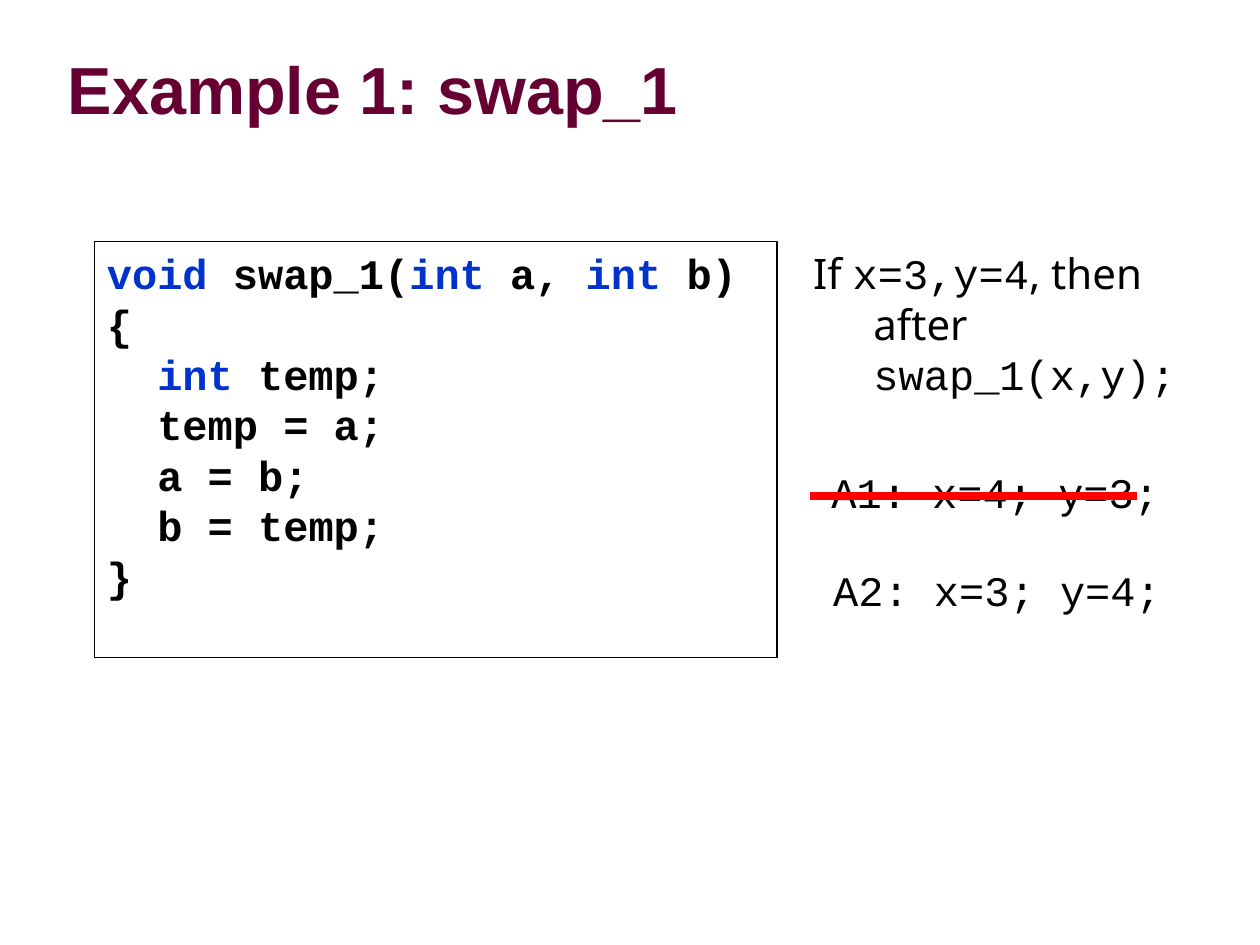
from lxml import etree
from pptx import Presentation
from pptx import util as u
from pptx.dml.color import RGBColor
from pptx.enum import shapes, text
from pptx.oxml.ns import qn

COLORS = {"title": "660033", "keyword": "0033CC", "ink": "000000", "strike": "FF0000"}
STYLES = {
    "title": ("Arial", 38, True, "title"),
    "code": ("Courier New", 24, True, "ink"),
    "keyword": ("Courier New", 24, True, "keyword"),
    "prose": ("Noto Sans", 24, False, "ink"),
    "mono": ("Courier New", 24, False, "ink"),
}


class Deck:
    """Draws styled elements on the current slide."""

    def __init__(self, prs):
        self.s = prs.slides.add_slide(prs.slide_layouts[6])

    def color(self, name):
        return RGBColor.from_string(COLORS[name])

    def format(self, r, style):
        name, size, bold, color = STYLES[style]
        r.font.name, r.font.size, r.font.bold = name, u.Pt(size), bold
        r.font.color.rgb = self.color(color)

    def fill_text(self, tf, lines):
        tf.text = "\n".join("" for _ in lines)
        for p, line in zip(tf.paragraphs, lines):
            p.alignment = text.PP_ALIGN.LEFT
            for part, style in line:
                if part == "\v":
                    p.add_line_break()
                    continue
                r = p.add_run()
                r.text = part
                self.format(r, style)

    def label(self, box, lines, wrap=True, anchor=text.MSO_ANCHOR.TOP, hanging=None):
        tf = self.s.shapes.add_textbox(*map(u.Pt, box)).text_frame
        tf.word_wrap, tf.vertical_anchor = wrap, anchor
        self.fill_text(tf, lines)
        if hanging:
            for p in tf.paragraphs:
                pPr = p._p.get_or_add_pPr()
                pPr.set("marL", str(u.Pt(hanging[0])))
                pPr.set("indent", str(u.Pt(hanging[1])))

    def code_box(self, box, lines):
        sp = self.s.shapes.add_shape(shapes.MSO_SHAPE.RECTANGLE, *map(u.Pt, box))
        sp.shadow.inherit = False
        sp.fill.background()
        sp.line.color.rgb = self.color("ink")
        sp.line.width = u.Pt(0.75)
        tf = sp.text_frame
        tf.word_wrap, tf.vertical_anchor = True, text.MSO_ANCHOR.TOP
        self.fill_text(tf, lines)

    def strike(self, x1, x2, y):
        ln = self.s.shapes.add_connector(
            shapes.MSO_CONNECTOR.STRAIGHT, u.Pt(x1), u.Pt(y), u.Pt(x2), u.Pt(y))
        ln.line.color.rgb = self.color("strike")
        ln.line.width = u.Pt(4.5)
        etree.SubElement(ln._element.spPr, qn("a:effectLst"))


def main():
    prs = Presentation()
    prs.slide_width, prs.slide_height = u.Pt(720), u.Pt(540)
    deck = Deck(prs)
    deck.label((31.7, 23.8, 686, 53.3), [[("Example 1: swap_1", "title")]],
               anchor=text.MSO_ANCHOR.MIDDLE)
    deck.code_box((54, 138, 390, 237.6), [
        [("void", "keyword"), (" swap_1(", "code"), ("int", "keyword"),
         (" a, ", "code"), ("int", "keyword"), (" b)", "code")],
        [("{", "code")],
        [("  ", "code"), ("int", "keyword"), (" temp;", "code")],
        [("  temp = a;", "code")],
        [("  a = b;", "code")],
        [("  b = temp;", "code")],
        [("}", "code")],
    ])
    deck.label((456, 138, 264, 95), [
        [("If ", "prose"), ("x=3,y=4", "mono"), (", then", "prose"), ("\v", "prose"),
         ("after ", "prose"), ("swap_1(x,y);", "mono")],
    ], hanging=(36, -34.5))
    for x, y, answer in ((468, 263, "A1: x=4; y=3;"), (469, 319, "A2: x=3; y=4;")):
        deck.label((x, y, 203, 36.7), [[(answer, "mono")]], wrap=False)
    deck.strike(463, 649.5, 283.5)
    prs.save("out.pptx")


if __name__ == "__main__":
    main()
